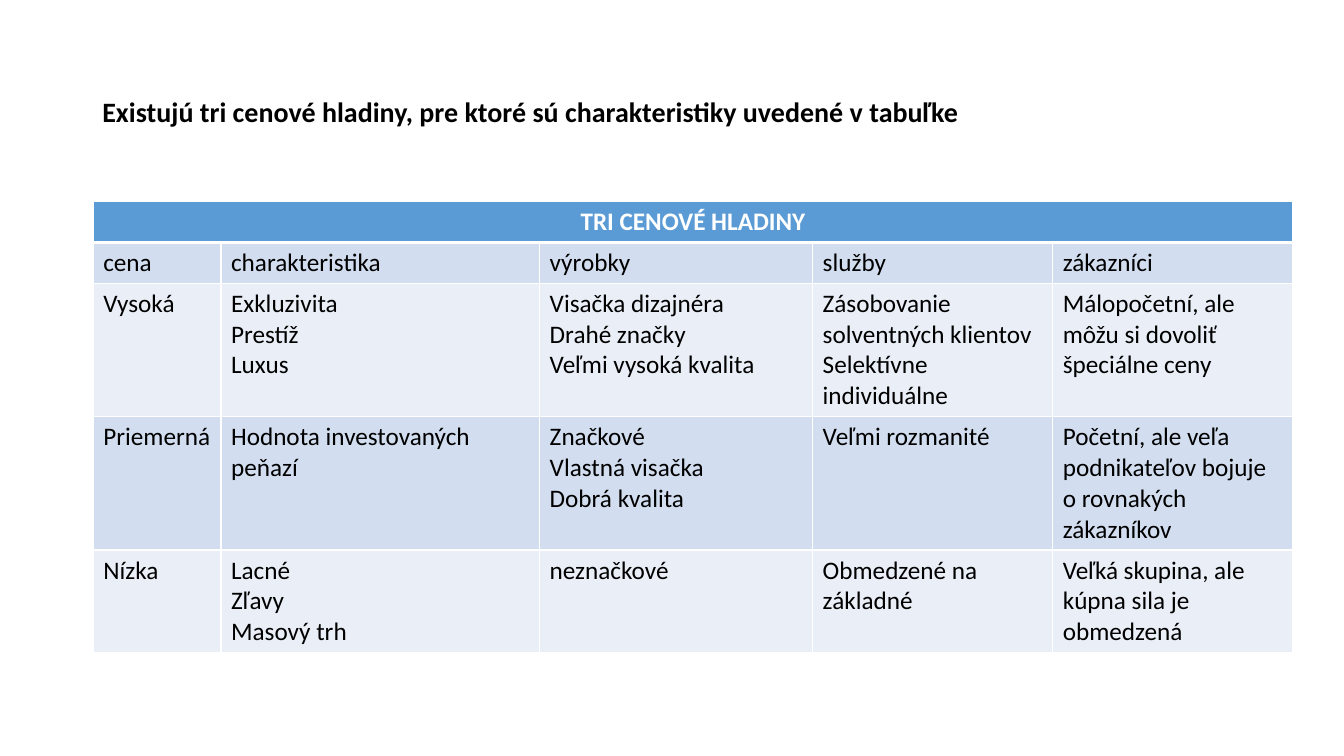
from lxml.etree import fromstring
from pptx import Presentation
from pptx.dml.color import RGBColor
from pptx.enum.text import MSO_ANCHOR as Anchor, PP_ALIGN as Align
from pptx.oxml.ns import nsdecls
from pptx.util import Cm, Pt


def color(hex_code):
    return RGBColor.from_string(hex_code)


def add_text(paragraph, text, size, hex_code, bold=False):
    run = paragraph.add_run()
    run.text = text
    run.font.name = "Calibri"
    run.font.size = Pt(size)
    run.font.bold = bold
    run.font.color.rgb = color(hex_code)


deck = Presentation()
deck.slide_width, deck.slide_height = Cm(33.87), Cm(19.05)
slide = deck.slides.add_slide(deck.slide_layouts[6])

# Heading
heading = slide.shapes.add_textbox(Cm(2.33), Cm(1.01), Cm(29.21), Cm(3.68)).text_frame
heading.word_wrap = True
heading.vertical_anchor = Anchor.MIDDLE
heading.paragraphs[0].line_spacing = 0.9
add_text(heading.paragraphs[0],
         "Existujú tri cenové hladiny, pre ktoré sú charakteristiky uvedené v tabuľke",
         20, "000000", bold=True)

# Price levels: each cell lists its paragraphs
price_levels = [
    [["TRI CENOVÉ HLADINY"], [], [], [], []],
    [["cena"], ["charakteristika"], ["výrobky"], ["služby"], ["zákazníci"]],
    [["Vysoká"],
     ["Exkluzivita", "Prestíž", "Luxus"],
     ["Visačka dizajnéra", "Drahé značky", "Veľmi vysoká kvalita"],
     ["Zásobovanie solventných klientov", "Selektívne", "individuálne"],
     ["Málopočetní, ale môžu si dovoliť špeciálne ceny"]],
    [["Priemerná"],
     ["Hodnota investovaných peňazí"],
     ["Značkové", "Vlastná visačka", "Dobrá kvalita"],
     ["Veľmi rozmanité"],
     ["Početní, ale veľa podnikateľov bojuje o rovnakých zákazníkov"]],
    [["Nízka"],
     ["Lacné", "Zľavy", "Masový trh"],
     ["neznačkové"],
     ["Obmedzené na základné"],
     ["Veľká skupina, ale kúpna sila je obmedzená"]],
]
column_widths = [3.22, 8.03, 6.88, 6.05, 6.05]
row_heights = [1.03, 1.03, 3.36, 3.36, 2.58]
row_fills = ["5B9BD5", "D2DEEF", "EAEFF7", "D2DEEF", "EAEFF7"]

table = slide.shapes.add_table(
    len(row_heights), len(column_widths), Cm(2.35), Cm(5.08),
    Cm(sum(column_widths)), Cm(sum(row_heights))).table
for column, width in zip(table.columns, column_widths):
    column.width = Cm(width)
for row, height in zip(table.rows, row_heights):
    row.height = Cm(height)
table.cell(0, 0).merge(table.cell(0, len(column_widths) - 1))

for r, level in enumerate(price_levels):
    is_header = r == 0
    for c, lines in enumerate(level):
        cell = table.cell(r, c)
        cell.fill.solid()
        cell.fill.fore_color.rgb = color(row_fills[r])

        # White borders, thicker under the header
        thick_side = {0: "B", 1: "T"}.get(r)
        for place, side in enumerate("LRTB"):
            width = Pt(3 if side == thick_side else 1)
            cell._tc.get_or_add_tcPr().insert(place, fromstring(
                f'<a:ln{side} {nsdecls("a")} w="{width}"><a:solidFill>'
                f'<a:srgbClr val="FFFFFF"/></a:solidFill></a:ln{side}>'))

        for i, line in enumerate(lines):
            frame = cell.text_frame
            paragraph = frame.add_paragraph() if i else frame.paragraphs[0]
            paragraph.alignment = Align.CENTER if is_header else Align.LEFT
            add_text(paragraph, line, 18, "FFFFFF" if is_header else "000000", is_header)

deck.save("out.pptx")
